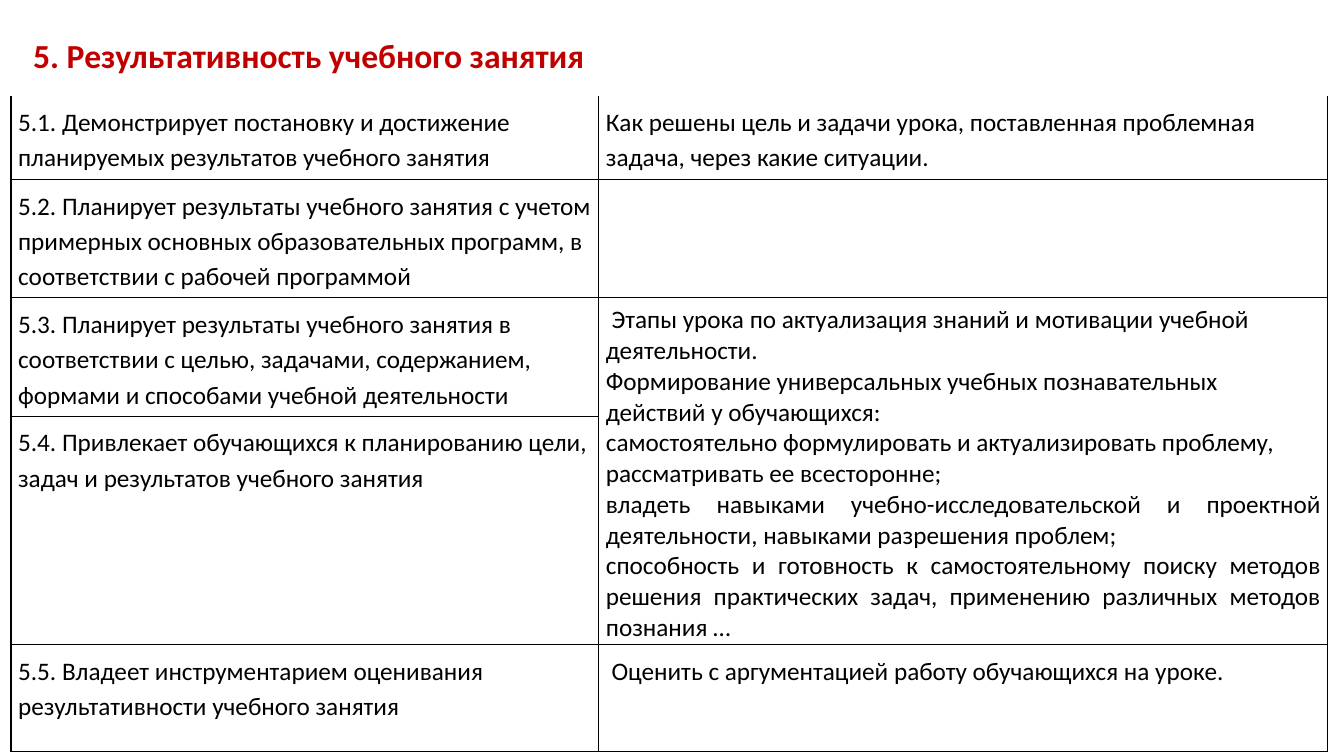
from dataclasses import dataclass

from lxml.etree import SubElement
from pptx import Presentation
from pptx.dml.color import RGBColor
from pptx.enum.text import MSO_ANCHOR, PP_ALIGN
from pptx.oxml.ns import qn
from pptx.util import Inches, Pt


@dataclass(frozen=True)
class Theme:
    font: str = "Calibri"
    title_size: int = 24
    body_size: int = 18
    title_color: str = "C00000"
    text_color: str = "000000"
    border_color: str = "000000"
    border_width: int = 1


THEME = Theme()
SPACED = {"line_spacing": 1.15, "space_after": Pt(10)}
PLAIN = {}
JUSTIFIED = {"alignment": PP_ALIGN.JUSTIFY}

COLUMN_WIDTHS = [5.83, 7.23]
ROW_HEIGHTS = [0.8, 1.14, 1.14, 2.26, 1.06]

CRITERIA = [
    "5.1. Демонстрирует постановку и достижение планируемых результатов учебного занятия",
    "5.2. Планирует результаты учебного занятия с учетом примерных основных "
    "образовательных программ, в соответствии с рабочей программой",
    "5.3. Планирует результаты учебного занятия в соответствии с целью, задачами, "
    "содержанием, формами и способами учебной деятельности",
    "5.4. Привлекает обучающихся к планированию цели, задач и результатов учебного занятия",
    "5.5. Владеет инструментарием оценивания результативности учебного занятия",
]

COMMENTS = {
    0: [("Как решены цель и задачи урока, поставленная проблемная задача, "
         "через какие ситуации.", SPACED)],
    2: [
        (" Этапы урока по актуализация знаний и мотивации учебной деятельности.", PLAIN),
        ("Формирование универсальных учебных познавательных действий у обучающихся:", PLAIN),
        ("самостоятельно формулировать и актуализировать проблему, "
         "рассматривать ее всесторонне;", PLAIN),
        ("владеть навыками учебно-исследовательской и проектной деятельности, "
         "навыками разрешения проблем;", JUSTIFIED),
        ("способность и готовность к самостоятельному поиску методов решения "
         "практических задач, применению различных методов познания …", JUSTIFIED),
    ],
    4: [(" Оценить с аргументацией работу обучающихся на уроке.", SPACED)],
}


def apply_format(target, values):
    for name, value in values.items():
        setattr(target, name, value)


def write_paragraphs(frame, paragraphs, size, color, bold=False):
    for index, (text, layout) in enumerate(paragraphs):
        para = frame.paragraphs[0] if index == 0 else frame.add_paragraph()
        apply_format(para, layout)
        span = para.add_run()
        span.text = text
        apply_format(span.font, {"name": THEME.font, "size": Pt(size), "bold": bold})
        span.font.color.rgb = RGBColor.from_string(color)


def add_title(page, text):
    box = page.shapes.add_textbox(Inches(0.23), Inches(0.4), Inches(12.75), Inches(0.35))
    apply_format(box.text_frame, {"word_wrap": True, "vertical_anchor": MSO_ANCHOR.MIDDLE})
    write_paragraphs(box.text_frame, [(text, {"line_spacing": 0.9})],
                     THEME.title_size, THEME.title_color, bold=True)


def set_borders(cell, sides):
    properties = cell._tc.get_or_add_tcPr()
    for side in ("L", "R", "T", "B"):
        line = SubElement(properties, qn(f"a:ln{side}"), w=str(Pt(THEME.border_width)))
        if side in sides:
            fill = SubElement(line, qn("a:solidFill"))
            SubElement(fill, qn("a:srgbClr"), val=THEME.border_color)
        else:
            SubElement(line, qn("a:noFill"))


def format_cell(cell, sides):
    margins = ("margin_left", "margin_right", "margin_top", "margin_bottom")
    apply_format(cell, dict.fromkeys(margins, Inches(0.07)))
    set_borders(cell, sides)
    cell.fill.background()


def add_results_table(page):
    frame = page.shapes.add_table(
        len(ROW_HEIGHTS), len(COLUMN_WIDTHS), Inches(0.11), Inches(0.95),
        Inches(sum(COLUMN_WIDTHS)), Inches(sum(ROW_HEIGHTS)))
    table = frame.table
    apply_format(table, {"first_row": False, "horz_banding": False})
    for column, width in zip(table.columns, COLUMN_WIDTHS):
        column.width = Inches(width)
    for index, height in enumerate(ROW_HEIGHTS):
        table.rows[index].height = Inches(height)
        for cell in table.rows[index].cells:
            format_cell(cell, "LRB" if index == 0 else "LRTB")
    table.cell(2, 1).merge(table.cell(3, 1))
    for index, criterion in enumerate(CRITERIA):
        contents = ([(criterion, SPACED)], COMMENTS.get(index, []))
        for column, paragraphs in enumerate(contents):
            write_paragraphs(table.cell(index, column).text_frame, paragraphs,
                             THEME.body_size, THEME.text_color)


def main():
    deck = Presentation()
    apply_format(deck, {"slide_width": Inches(13.33), "slide_height": Inches(7.5)})
    page = deck.slides.add_slide(deck.slide_layouts[6])
    add_title(page, "5. Результативность учебного занятия")
    add_results_table(page)
    deck.save("out.pptx")


if __name__ == "__main__":
    main()
